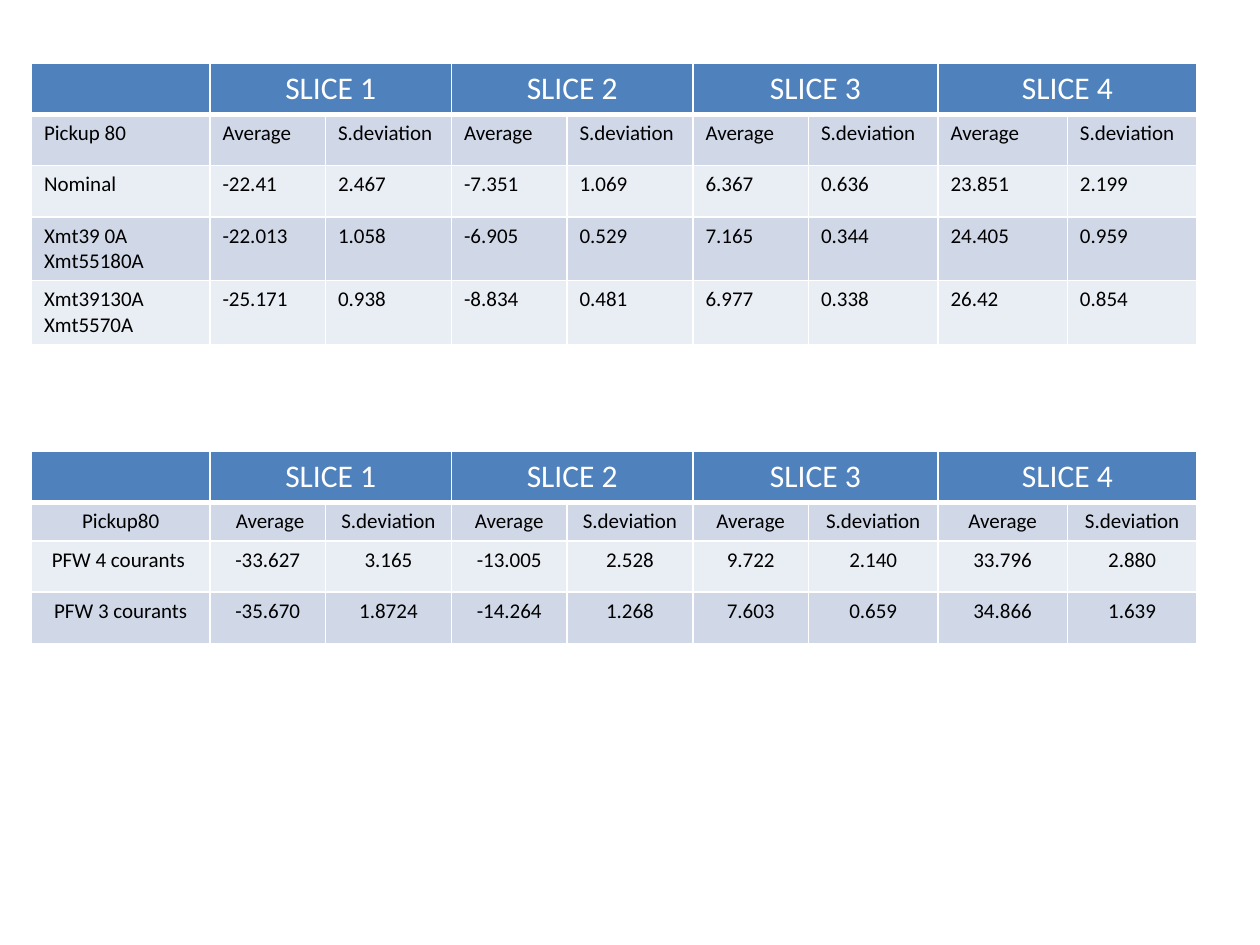
from lxml import etree
from pptx import Presentation
from pptx.dml.color import RGBColor
from pptx.enum.text import PP_ALIGN
from pptx.oxml.ns import qn
from pptx.util import Pt

CENTER = PP_ALIGN.CENTER
LEFT = PP_ALIGN.LEFT
WHITE = RGBColor(0xFF, 0xFF, 0xFF)
BLACK = RGBColor(0, 0, 0)
HEADER_BLUE = RGBColor(0x4F, 0x81, 0xBD)
BANDS = [RGBColor(0xD0, 0xD8, 0xE8), RGBColor(0xE9, 0xED, 0xF4)]
FONT = "Calibri"

SLICES = ["SLICE 1", "SLICE 2", "SLICE 3", "SLICE 4"]
MEASURES = ["Average", "S.deviation"]
TABLE_LEFT = 18
COLUMN_WIDTHS = [102, 66, 72, 66, 72, 66, 74, 74, 74]
HEADER_HEIGHT = 29.2

TABLES = [
    {
        "top": 36.3,
        "align": LEFT,
        "heights": [29.2, 29.2, 36.5, 36.5],
        "rows": [
            ["Pickup 80"] + MEASURES * 4,
            ["Nominal", "-22.41", "2.467", "-7.351", "1.069",
             "6.367", "0.636", "23.851", "2.199"],
            ["Xmt39 0A\nXmt55180A", "-22.013", "1.058", "-6.905", "0.529",
             "7.165", "0.344", "24.405", "0.959"],
            ["Xmt39130A\nXmt5570A", "-25.171", "0.938", "-8.834", "0.481",
             "6.977", "0.338", "26.42", "0.854"],
        ],
    },
    {
        "top": 258,
        "align": CENTER,
        "heights": [22, 29.2, 29.2],
        "rows": [
            ["Pickup80", " Average", "S.deviation"] + MEASURES * 3,
            ["PFW 4 courants ", "-33.627", "3.165", "-13.005", "2.528",
             "9.722", "2.140", "33.796", "2.880"],
            ["PFW 3 courants", "-35.670", "1.8724", "-14.264", "1.268",
             "7.603", "0.659", "34.866", "1.639"],
        ],
    },
]


def set_borders(cell, bottom_width):
    properties = cell._tc.get_or_add_tcPr()
    widths = {"a:lnL": 1, "a:lnR": 1, "a:lnT": 1, "a:lnB": bottom_width}
    for position, (tag, width) in enumerate(widths.items()):
        line = etree.Element(qn(tag), w=str(Pt(width)))
        fill = etree.SubElement(line, qn("a:solidFill"))
        etree.SubElement(fill, qn("a:srgbClr"), val=str(WHITE))
        properties.insert(position, line)


def style_cell(cell, color, bottom_width=1):
    cell.fill.solid()
    cell.fill.fore_color.rgb = color
    set_borders(cell, bottom_width)


def write_text(cell, text, size, color, align):
    for index, words in enumerate(text.split("\n")):
        frame = cell.text_frame
        paragraph = frame.add_paragraph() if index else frame.paragraphs[0]
        paragraph.alignment = align
        run = paragraph.add_run()
        run.text = words
        run.font.name = FONT
        run.font.size = Pt(size)
        run.font.bold = False
        run.font.color.rgb = color


def add_results_table(slide, content):
    heights = [HEADER_HEIGHT] + content["heights"]
    table = slide.shapes.add_table(
        len(heights), len(COLUMN_WIDTHS), Pt(TABLE_LEFT), Pt(content["top"]),
        Pt(sum(COLUMN_WIDTHS)), Pt(sum(heights))).table
    for column, width in zip(table.columns, COLUMN_WIDTHS):
        column.width = Pt(width)
    for row, height in zip(table.rows, heights):
        row.height = Pt(height)

    for cell in table.rows[0].cells:
        style_cell(cell, HEADER_BLUE, 3)
    for index, title in enumerate(SLICES):
        first = 1 + 2 * index
        header = table.cell(0, first)
        header.merge(table.cell(0, first + 1))
        write_text(header, title, 18, WHITE, CENTER)

    for row_index, values in enumerate(content["rows"]):
        for column_index, value in enumerate(values):
            cell = table.cell(row_index + 1, column_index)
            style_cell(cell, BANDS[row_index % 2])
            write_text(cell, value, 12, BLACK, content["align"])


def main():
    presentation = Presentation()
    presentation.slide_width = Pt(720)
    presentation.slide_height = Pt(540)
    slide = presentation.slides.add_slide(presentation.slide_layouts[6])
    for content in TABLES:
        add_results_table(slide, content)
    presentation.save("out.pptx")


if __name__ == "__main__":
    main()
